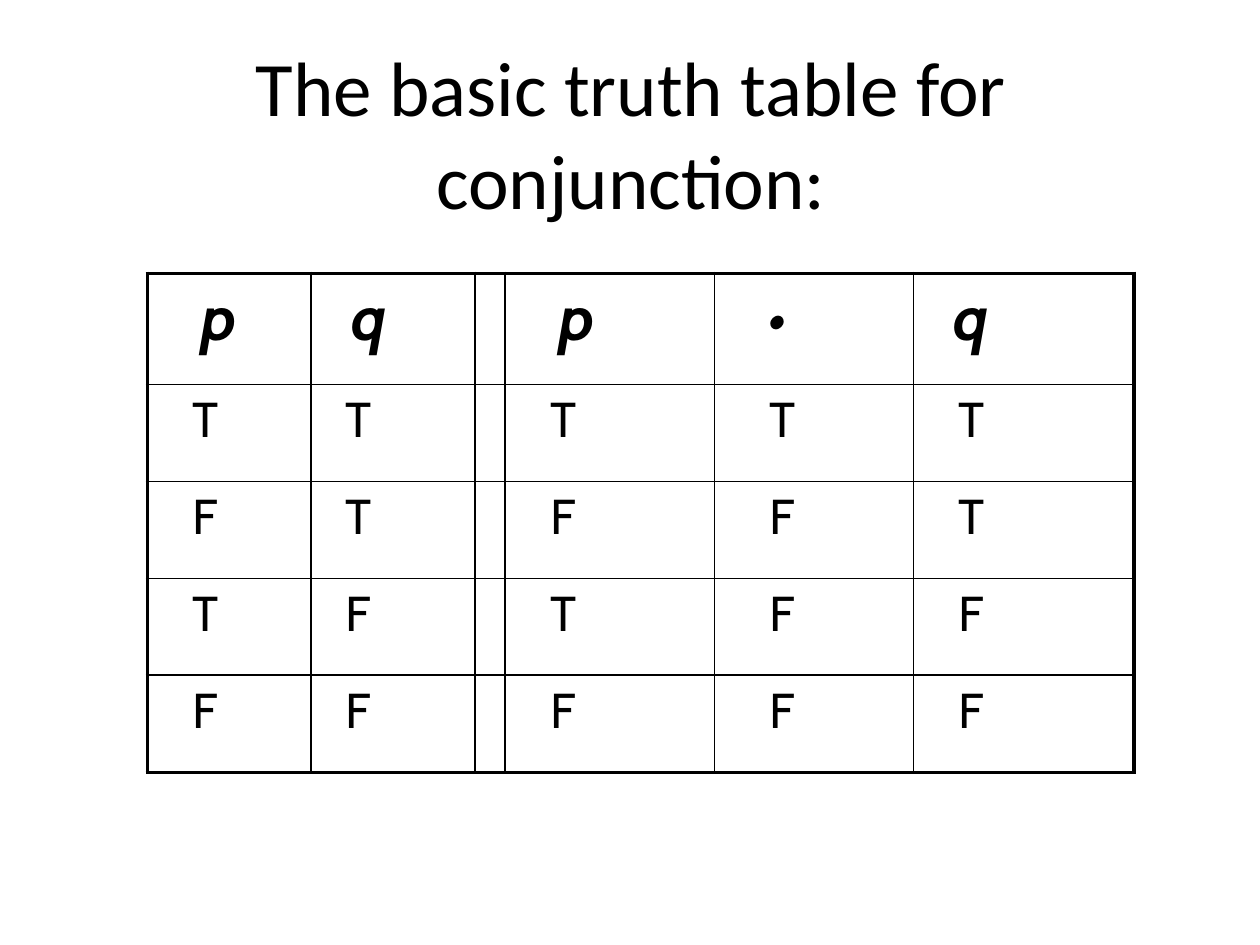
"""Build a slide with the basic truth table for conjunction."""
from lxml import etree
from pptx import Presentation
from pptx.dml.color import RGBColor
from pptx.enum.text import MSO_ANCHOR, PP_ALIGN
from pptx.oxml.ns import qn
from pptx.util import Inches, Pt

CENTER, LEFT = PP_ALIGN.CENTER, PP_ALIGN.LEFT
MIDDLE = MSO_ANCHOR.MIDDLE

COLORS = {"ink": "000000"}
TITLE = "The basic truth table for conjunction:"
TRUTH_TABLE = [
    ["p", "q", "", "p", "•", "q"],
    ["T", "T", "", "T", "T", "T"],
    ["F", "T", "", "F", "F", "T"],
    ["T", "F", "", "T", "F", "F"],
    ["F", "F", "", "F", "F", "F"],
]
COLUMN_WIDTHS = [1.3, 1.3, 0.23, 1.66, 1.58, 1.75]
ROW_HEIGHTS = [0.88] + [0.77] * 4
HEADER_INDENTS = [0.43, 0.32, 0.1, 0.43, 0.43, 0.32]
VALUE_INDENTS = [0.36, 0.27, 0.1, 0.36, 0.44, 0.36]
OUTER_LINE, INNER_LINE = 2.25, 1


def write_text(frame, text, font="Cabin", size=28, bold=False, italic=False, align=LEFT):
    paragraph = frame.paragraphs[0]
    paragraph.alignment = align
    run = paragraph.add_run()
    run.text = text
    run.font.name = font
    run.font.size = Pt(size)
    run.font.bold = bold
    run.font.italic = italic
    run.font.color.rgb = RGBColor.from_string(COLORS["ink"])


def draw_borders(cell, outer_sides):
    properties = cell._tc.get_or_add_tcPr()
    for side, is_outer in outer_sides.items():
        width = Pt(OUTER_LINE if is_outer else INNER_LINE)
        line = etree.SubElement(properties, qn(f"a:ln{side}"), w=str(width))
        fill = etree.SubElement(line, qn("a:solidFill"))
        etree.SubElement(fill, qn("a:srgbClr"), val=COLORS["ink"])


def add_title(slide):
    title = slide.shapes.add_textbox(Inches(0.75), Inches(0.25), Inches(8.52), Inches(1.6))
    title.text_frame.word_wrap = True
    title.text_frame.vertical_anchor = MIDDLE
    write_text(title.text_frame, TITLE, font="Calibri", size=44, align=CENTER)


def add_truth_table(slide):
    last_row, last_column = len(ROW_HEIGHTS) - 1, len(COLUMN_WIDTHS) - 1
    table = slide.shapes.add_table(
        len(ROW_HEIGHTS), len(COLUMN_WIDTHS), Inches(1.17), Inches(2.17),
        Inches(sum(COLUMN_WIDTHS)), Inches(sum(ROW_HEIGHTS))).table
    table.first_row = table.horz_banding = False
    for column, width in zip(table.columns, COLUMN_WIDTHS):
        column.width = Inches(width)
    for row, height in zip(table.rows, ROW_HEIGHTS):
        row.height = Inches(height)

    for r, values in enumerate(TRUTH_TABLE):
        is_header = r == 0
        indents = HEADER_INDENTS if is_header else VALUE_INDENTS
        for c, value in enumerate(values):
            cell = table.cell(r, c)
            cell.margin_left = Inches(indents[c])
            draw_borders(cell, {"L": c == 0, "R": c == last_column,
                                "T": is_header, "B": r == last_row})
            cell.fill.background()
            if value:
                write_text(cell.text_frame, value, size=36 if is_header else 28,
                           bold=is_header, italic=is_header)


def main():
    presentation = Presentation()
    presentation.slide_width, presentation.slide_height = Inches(10), Inches(7.5)
    slide = presentation.slides.add_slide(presentation.slide_layouts[6])
    add_title(slide)
    add_truth_table(slide)
    presentation.save("out.pptx")


if __name__ == "__main__":
    main()
